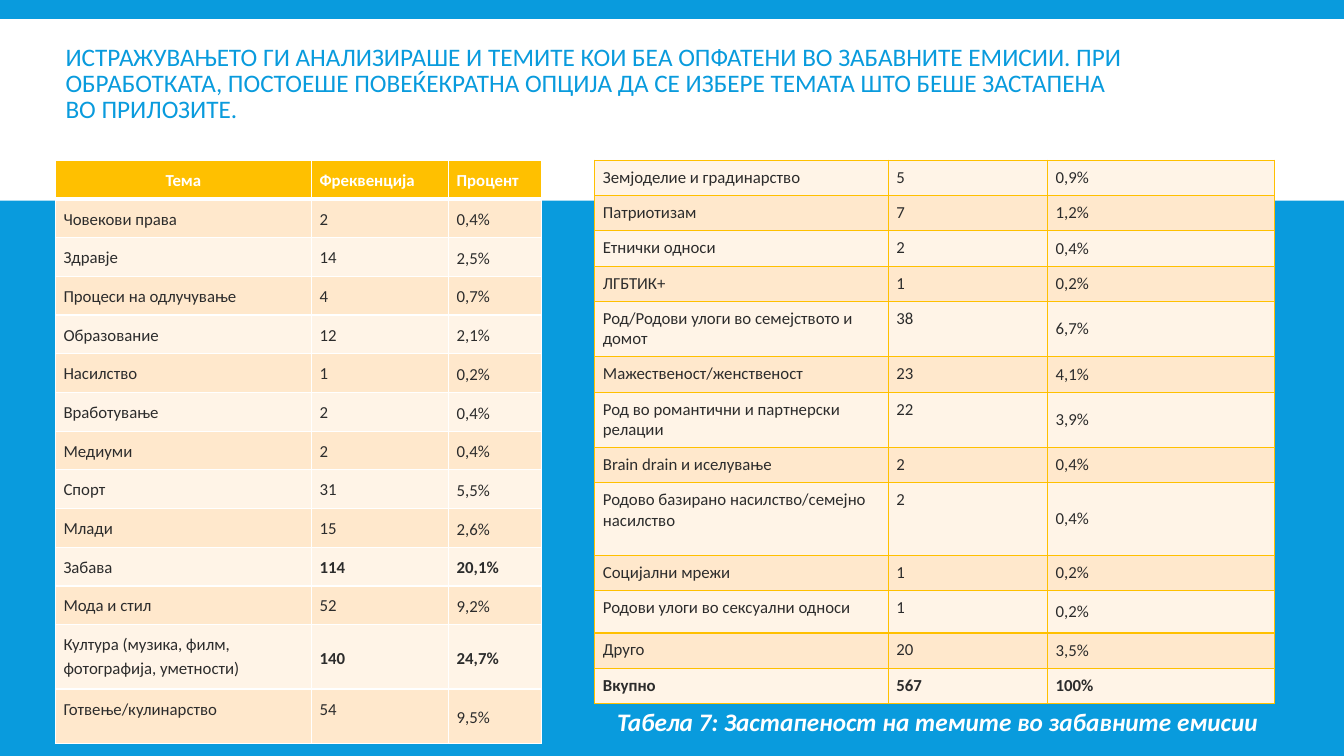
from lxml.etree import SubElement
from pptx import Presentation
from pptx.dml.color import RGBColor
from pptx.enum.shapes import MSO_SHAPE
from pptx.enum.text import MSO_ANCHOR, PP_ALIGN
from pptx.oxml.ns import qn
from pptx.util import Inches, Pt

TITLE = ("ИСТРАЖУВАЊЕТО ГИ АНАЛИЗИРАШЕ И ТЕМИТЕ КОИ БЕА ОПФАТЕНИ ВО ЗАБАВНИТЕ ЕМИСИИ. "
         "ПРИ ОБРАБОТКАТА, ПОСТОЕШЕ ПОВЕЌЕКРАТНА ОПЦИЈА ДА СЕ ИЗБЕРЕ ТЕМАТА "
         "ШТО БЕШЕ ЗАСТАПЕНА ВО ПРИЛОЗИТЕ.")
CAPTION = "Табела 7: Застапеност на темите во забавните емисии"
HEADER = ("Тема", "Фреквенција", "Процент")
TOTAL = "Вкупно"
FIRST_TOPICS = [
    HEADER,
    ("Човекови права", "2", "0,4%"),
    ("Здравје", "14", "2,5%"),
    ("Процеси на одлучување", "4", "0,7%"),
    ("Образование", "12", "2,1%"),
    ("Насилство", "1", "0,2%"),
    ("Вработување", "2", "0,4%"),
    ("Медиуми", "2", "0,4%"),
    ("Спорт", "31", "5,5%"),
    ("Млади", "15", "2,6%"),
    ("Забава", "114", "20,1%"),
    ("Мода и стил", "52", "9,2%"),
    ("Култура (музика, филм, фотографија, уметности)", "140", "24,7%"),
    ("Готвење/кулинарство", "54", "9,5%"),
]
OTHER_TOPICS = [
    ("Земјоделие и градинарство", "5", "0,9%"),
    ("Патриотизам", "7", "1,2%"),
    ("Етнички односи", "2", "0,4%"),
    ("ЛГБТИК+", "1", "0,2%"),
    ("Род/Родови улоги во семејството и домот", "38", "6,7%"),
    ("Мажественост/женственост", "23", "4,1%"),
    ("Род во романтични и партнерски релации", "22", "3,9%"),
    ("Brain drаin и иселување", "2", "0,4%"),
    ("Родово базирано насилство/семејно насилство", "2", "0,4%"),
    ("Социјални мрежи", "1", "0,2%"),
    ("Родови улоги во сексуални односи", "1", "0,2%"),
    ("Друго", "20", "3,5%"),
    (TOTAL, "567", "100%"),
]
BOLD_FREQUENCIES = {"114", "140", "567"}
CENTRED_FREQUENCY = "140"

FONT = "Calibri"
BLUE = RGBColor(0x09, 0x9B, 0xDD)
WHITE = RGBColor(0xFF, 0xFF, 0xFF)
GOLD = RGBColor(0xFF, 0xC0, 0x00)
PEACH = RGBColor(0xFF, 0xE8, 0xCC)
CREAM = RGBColor(0xFF, 0xF4, 0xE7)
DARK = RGBColor(0x2C, 0x2C, 0x2C)

FIRST_HEIGHTS = [(5.79 - 0.64 - 0.54) / 12] * 12 + [0.64, 0.54]
TALL_ROWS = {4: 0.55, 6: 0.55, 8: 0.72, 10: 0.42}
OTHER_HEIGHTS = [TALL_ROWS.get(row, 0.35) for row in range(len(OTHER_TOPICS))]


def style_paragraph(paragraph, size, color, bold=False, italic=False):
    font = paragraph.font
    font.name, font.size, font.bold, font.italic = FONT, Pt(size), bold, italic
    font.color.rgb = color


def add_borders(cell, color, widths):
    properties = cell._tc.get_or_add_tcPr()
    for index, (side, width) in enumerate(zip("LRTB", widths)):
        line = SubElement(properties, qn(f"a:ln{side}"), w=str(Pt(width)))
        fill = SubElement(line, qn("a:solidFill"))
        SubElement(fill, qn("a:srgbClr"), val=str(color))
        properties.insert(index, line)


def fill_cell(cell, text, row, column, values, first_fill, border, spacing):
    is_header = values == HEADER
    cell.text = text
    cell.margin_left = cell.margin_right = Inches(0.08)
    cell.margin_top = cell.margin_bottom = Inches(0.07)
    centred = not is_header and (column == 2 or text == CENTRED_FREQUENCY)
    cell.vertical_anchor = MSO_ANCHOR.MIDDLE if centred else MSO_ANCHOR.TOP
    paragraph = cell.text_frame.paragraphs[0]
    paragraph.line_spacing = spacing
    paragraph.space_after = Pt(7.2)
    if is_header and column == 0:
        paragraph.alignment = PP_ALIGN.CENTER
    bold = (is_header or values[0] == TOTAL
            or (column > 0 and values[1] in BOLD_FREQUENCIES))
    style_paragraph(paragraph, 12, WHITE if is_header else DARK, bold)
    cell.fill.solid()
    cell.fill.fore_color.rgb = GOLD if is_header else first_fill[row % 2]
    top = 3 if first_fill[0] == CREAM and border == WHITE and row == 1 else 1
    add_borders(cell, border, (1, 1, top, 3 if is_header else 1))


def add_topic_table(slide, topics, left, widths, heights, border, spacing):
    frame = slide.shapes.add_table(len(topics), len(widths), Inches(left), Inches(1.59),
                                   Inches(sum(widths)), Inches(sum(heights)))
    table = frame.table
    table.first_row = topics[0] == HEADER
    table.horz_banding = False
    for column, width in zip(table.columns, widths):
        column.width = Inches(width)
    for row, (values, height) in enumerate(zip(topics, heights)):
        table.rows[row].height = Inches(height)
        for column, text in enumerate(values):
            fill_cell(table.cell(row, column), text, row, column, values,
                      (CREAM, PEACH), border, spacing)


def main():
    presentation = Presentation()
    presentation.slide_width, presentation.slide_height = Inches(13.33), Inches(7.5)
    slide = presentation.slides.add_slide(presentation.slide_layouts[5])
    slide.background.fill.solid()
    slide.background.fill.fore_color.rgb = BLUE

    title = slide.shapes.title
    band = slide.shapes.add_shape(MSO_SHAPE.RECTANGLE, 0, Inches(0.19),
                                  presentation.slide_width, Inches(1.8))
    band.shadow.inherit = False
    band.fill.solid()
    band.fill.fore_color.rgb = WHITE
    band.line.fill.background()
    title.element.addprevious(band.element)

    title.left, title.top = Inches(0.55), Inches(0.36)
    title.width, title.height = Inches(10.7), Inches(1.65)
    title.text_frame.text = TITLE
    title.text_frame.word_wrap = True
    title.text_frame.vertical_anchor = MSO_ANCHOR.TOP
    title.text_frame.margin_top = Inches(0.1)
    paragraph = title.text_frame.paragraphs[0]
    paragraph.alignment = PP_ALIGN.LEFT
    paragraph.line_spacing = 0.85
    style_paragraph(paragraph, 18, BLUE)

    add_topic_table(slide, FIRST_TOPICS, 0.55, (2.54, 1.36, 0.92),
                    FIRST_HEIGHTS, WHITE, 1.15)
    add_topic_table(slide, OTHER_TOPICS, 5.9, (2.91, 1.58, 2.25),
                    OTHER_HEIGHTS, GOLD, 1.0)

    caption = slide.shapes.add_textbox(Inches(5.97), Inches(6.93), Inches(6.66), Inches(0.41))
    caption.text_frame.word_wrap = True
    caption.text_frame.text = CAPTION
    paragraph = caption.text_frame.paragraphs[0]
    paragraph.alignment = PP_ALIGN.CENTER
    paragraph.line_spacing = 1.08
    paragraph.space_after = Pt(7.9)
    style_paragraph(paragraph, 18, WHITE, bold=True, italic=True)

    presentation.save("out.pptx")


if __name__ == "__main__":
    main()
